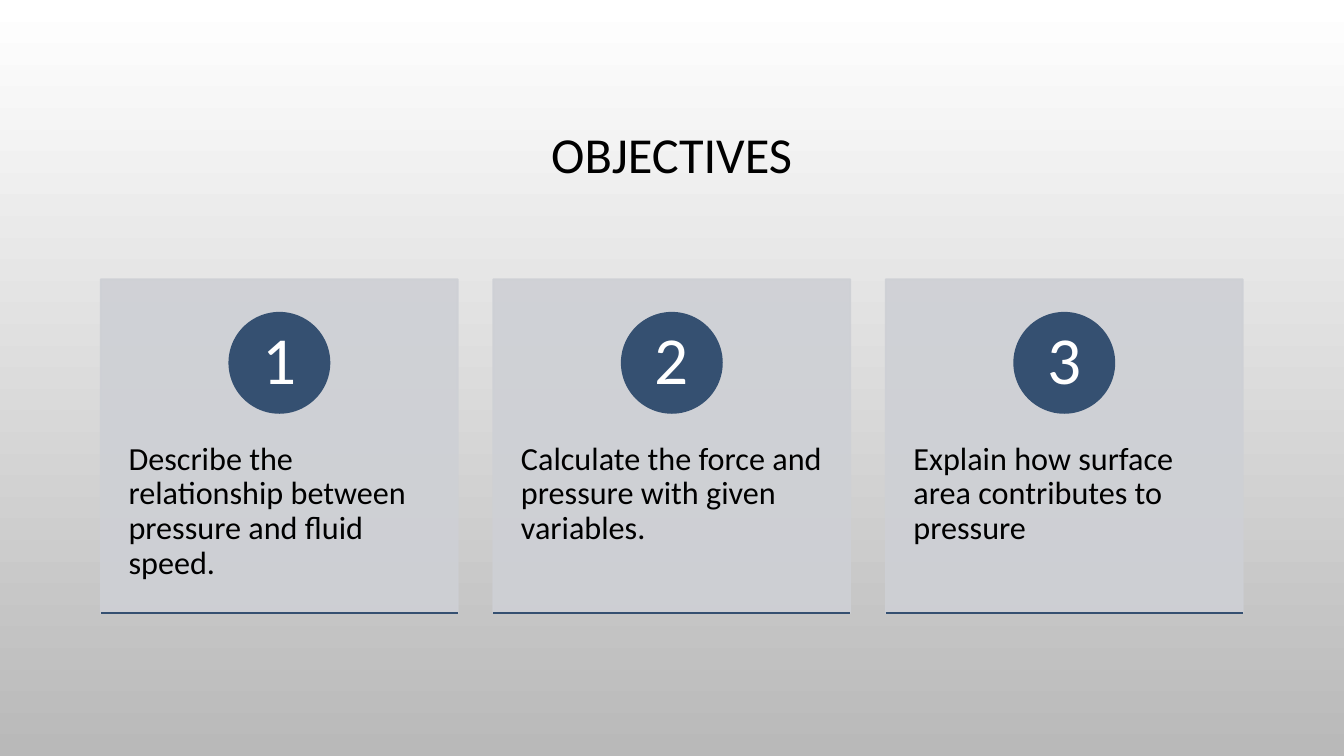
import pptx
import pptx.dml.color
import pptx.enum.shapes
import pptx.enum.text
import pptx.oxml
import pptx.oxml.ns
import pptx.util
from pptx.util import Cm

FONT = "Calibri"
BLACK, WHITE, NAVY, PALE = "000000", "FFFFFF", "355071", "CED0D5"
OBJECTIVES = [
    "Describe the relationship between pressure and fluid speed.",
    "Calculate the force and pressure with given variables.",
    "Explain how surface area contributes to pressure",
]
MARGIN = 2.54
CARD_TOP, CARD_WIDTH, CARD_HEIGHT, CARD_PITCH = 7.04, 9, 8.41, 9.89


def rgb(color):
    return pptx.dml.color.RGBColor.from_string(color)


def set_alpha(fill_parent, percent):
    """Make the solid colour inside a fill or line element partly transparent."""
    color = fill_parent.find(pptx.oxml.ns.qn("a:solidFill"))[0]
    color.append(pptx.oxml.parse_xml(
        f'<a:alpha {pptx.oxml.ns.nsdecls("a")} val="{percent * 1000}"/>'))


def write(holder, text, size, color, align, anchor, insets):
    frame = holder.text_frame
    frame.word_wrap = True
    frame.vertical_anchor = anchor
    frame.margin_left = frame.margin_right = Cm(insets[0])
    frame.margin_top = frame.margin_bottom = Cm(insets[1])
    paragraph = frame.paragraphs[0]
    paragraph.alignment = align
    paragraph.line_spacing = 0.9
    run = paragraph.add_run()
    run.text = text
    run.font.name = FONT
    run.font.size = pptx.util.Pt(size)
    run.font.color.rgb = rgb(color)


def add_filled(slide, kind, left, top, width, height, color):
    shape = slide.shapes.add_shape(kind, Cm(left), Cm(top), Cm(width), Cm(height))
    shape.shadow.inherit = False
    shape.fill.solid()
    shape.fill.fore_color.rgb = rgb(color)
    shape.line.color.rgb = rgb(color)
    shape.line.width = pptx.util.Pt(1.25)
    return shape


def paint_background(slide):
    fill = slide.background.fill
    fill.gradient()
    fill.gradient_angle = 270
    for stop, position, color in zip(fill.gradient_stops, (0, 1), (WHITE, "B9B9B9")):
        stop.position = position
        stop.color.rgb = rgb(color)


def add_title(slide, left, top, width, height):
    title = slide.shapes.add_textbox(Cm(left), Cm(top), Cm(width), Cm(height))
    write(title, "OBJECTIVES", 36, BLACK, pptx.enum.text.PP_ALIGN.CENTER,
          pptx.enum.text.MSO_ANCHOR.MIDDLE, (0.25, 0.13))


def add_objective_card(slide, number, objective, left, top, width, height):
    shapes = pptx.enum.shapes.MSO_SHAPE
    panel = add_filled(slide, shapes.RECTANGLE, left, top, width, height, PALE)
    set_alpha(panel.fill._xPr, 90)
    set_alpha(panel.line._ln, 90)

    description = slide.shapes.add_textbox(
        Cm(left), Cm(top + 0.38 * height), Cm(width), Cm(0.6 * height))
    write(description, objective, 23, BLACK, pptx.enum.text.PP_ALIGN.LEFT,
          pptx.enum.text.MSO_ANCHOR.TOP, (0.7, 0.91))

    diameter = 0.3 * height
    badge = add_filled(slide, shapes.OVAL, left + (width - diameter) / 2,
                       top + 0.1 * height, diameter, diameter, NAVY)
    write(badge, str(number), 48, WHITE, pptx.enum.text.PP_ALIGN.CENTER,
          pptx.enum.text.MSO_ANCHOR.MIDDLE, (0.2, 0.03))

    bottom = Cm(top + height)
    baseline = slide.shapes.add_connector(
        pptx.enum.shapes.MSO_CONNECTOR.STRAIGHT,
        Cm(left), bottom, Cm(left + width), bottom)
    baseline.line.color.rgb = rgb(NAVY)
    baseline.line.width = pptx.util.Pt(1.25)
    baseline._element.spPr.append(pptx.oxml.parse_xml(
        f'<a:effectLst {pptx.oxml.ns.nsdecls("a")}/>'))


def main():
    presentation = pptx.Presentation()
    presentation.slide_width = Cm(33.87)
    presentation.slide_height = Cm(19.05)
    slide = presentation.slides.add_slide(presentation.slide_layouts[6])
    paint_background(slide)
    add_title(slide, MARGIN, 1.73, 28.78, 4.45)
    for index, objective in enumerate(OBJECTIVES):
        add_objective_card(slide, index + 1, objective, MARGIN + index * CARD_PITCH,
                           CARD_TOP, CARD_WIDTH, CARD_HEIGHT)
    presentation.save("out.pptx")


if __name__ == "__main__":
    main()
